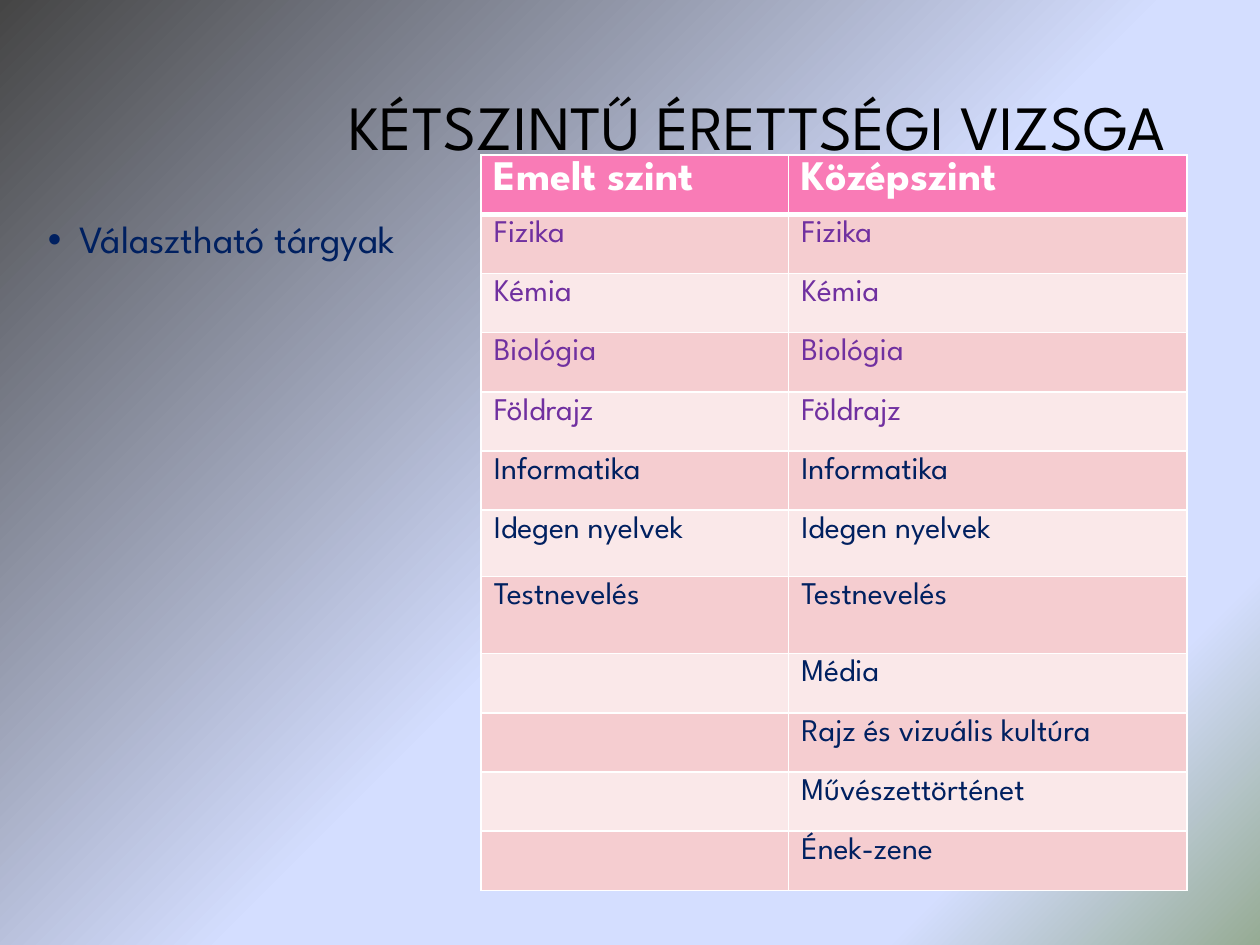
from dataclasses import dataclass

from lxml.etree import SubElement
from pptx import Presentation
from pptx.dml.color import RGBColor
from pptx.enum.text import MSO_ANCHOR, MSO_AUTO_SIZE, PP_ALIGN
from pptx.oxml import parse_xml
from pptx.oxml.ns import nsdecls, qn
from pptx.slide import Slide
from pptx.table import _Cell
from pptx.util import Pt


@dataclass(frozen=True)
class Theme:
    """Hold the font, type sizes and colours of the slide."""
    font: str = "League Spartan"
    title: float = 36
    body: float = 22
    head: float = 24
    item: float = 18
    black: str = "000000"
    white: str = "FFFFFF"
    navy: str = "002060"
    purple: str = "7030A0"
    pink: str = "F97BB6"
    bands: tuple = ("F5CDD0", "FAE8E9")
    stops: tuple = ((0, "454545"), (53, "D4DEFF"), (83, "D4DEFF"), (100, "96AB94"))


@dataclass(frozen=True)
class Box:
    """Place a shape, in points."""
    left: float
    top: float
    width: float
    height: float


@dataclass(frozen=True)
class Row:
    """Describe one table row."""
    high: str
    mid: str
    color: str
    height: float = 33.84


THEME = Theme()
COLS = (175.7, 227.5)
HEAD = Row("Emelt szint", "Középszint", THEME.white)
ROWS = (
    *(Row(name, name, THEME.purple) for name in ("Fizika", "Kémia", "Biológia", "Földrajz")),
    Row("Informatika", "Informatika", THEME.navy),
    Row("Idegen nyelvek", "Idegen nyelvek", THEME.navy, 38),
    Row("Testnevelés", "Testnevelés", THEME.navy, 44),
    *(Row("", name, THEME.navy) for name in
      ("Média", "Rajz és vizuális kultúra", "Művészettörténet", "Ének-zene")),
)


def paint(slide: Slide) -> None:
    """Fill the background with the diagonal gradient."""
    fill = slide.background.fill
    fill.gradient()
    fill.gradient_angle = 315
    stops = slide.element.find(".//" + qn("a:gsLst"))
    for old in list(stops):
        stops.remove(old)
    for pos, color in THEME.stops:
        stop = SubElement(stops, qn("a:gs"), pos=str(pos * 1000))
        SubElement(stop, qn("a:srgbClr"), val=color)


def style(para, size: float, color: str, bold: bool = False) -> None:
    """Format every run of a paragraph."""
    for run in para.runs:
        run.font.name = THEME.font
        run.font.size = Pt(size)
        run.font.bold = bold
        run.font.color.rgb = RGBColor.from_string(color)


def write(shape, box: Box, text: str, size: float, color: str):
    """Move a placeholder, set its text and return the paragraph."""
    shape.left, shape.top = Pt(box.left), Pt(box.top)
    shape.width, shape.height = Pt(box.width), Pt(box.height)
    frame = shape.text_frame
    frame.auto_size = MSO_AUTO_SIZE.NONE
    frame.text = text
    para = frame.paragraphs[0]
    para.line_spacing = 0.9
    para.space_before = Pt(0)
    style(para, size, color)
    return para


def bullet(para) -> None:
    """Give a paragraph a hanging round bullet."""
    props = para._p.get_or_add_pPr()
    props.set("marL", str(Pt(18)))
    props.set("indent", str(-Pt(18)))
    SubElement(props, qn("a:buFont"), typeface="Arial")
    SubElement(props, qn("a:buChar"), char="•")


def edge(cell: _Cell, top: float, bottom: float) -> None:
    """Draw the white borders of a cell."""
    props = cell._tc.get_or_add_tcPr()
    sides = (("L", 1), ("R", 1), ("T", top), ("B", bottom))
    for spot, (side, width) in enumerate(sides):
        props.insert(spot, parse_xml(
            f'<a:ln{side} {nsdecls("a")} w="{Pt(width)}"><a:solidFill>'
            f'<a:srgbClr val="{THEME.white}"/></a:solidFill></a:ln{side}>'))


def grid(slide: Slide, box: Box) -> None:
    """Draw the table of subjects by exam level."""
    rows = (HEAD, *ROWS)
    table = slide.shapes.add_table(
        len(rows), len(COLS), Pt(box.left), Pt(box.top), Pt(box.width), Pt(box.height)).table
    for col, width in zip(table.columns, COLS):
        col.width = Pt(width)
    for num, row in enumerate(rows):
        table.rows[num].height = Pt(row.height)
        head = num == 0
        for cell, text in zip(table.rows[num].cells, (row.high, row.mid)):
            cell.text = text
            style(cell.text_frame.paragraphs[0],
                  THEME.head if head else THEME.item, row.color, head)
            cell.fill.solid()
            shade = THEME.pink if head else THEME.bands[(num - 1) % 2]
            cell.fill.fore_color.rgb = RGBColor.from_string(shade)
            edge(cell, 3 if num == 1 else 1, 3 if head else 1)


def main() -> None:
    """Build and save the slide."""
    deck = Presentation()
    deck.slide_width, deck.slide_height = Pt(720), Pt(540)
    slide = deck.slides.add_slide(deck.slide_layouts[1])
    paint(slide)
    title = slide.shapes.title
    para = write(title, Box(171.4, 60.5, 501.8, 28),
                 "KÉTSZINTŰ ÉRETTSÉGI VIZSGA", THEME.title, THEME.black)
    para.alignment = PP_ALIGN.RIGHT
    title.text_frame.vertical_anchor = MSO_ANCHOR.MIDDLE
    bullet(write(slide.placeholders[1], Box(20.2, 122.4, 238.3, 360),
                 "Választható tárgyak", THEME.body, THEME.navy))
    grid(slide, Box(275, 88.6, sum(COLS), sum(row.height for row in (HEAD, *ROWS))))
    deck.save("out.pptx")


if __name__ == "__main__":
    main()
